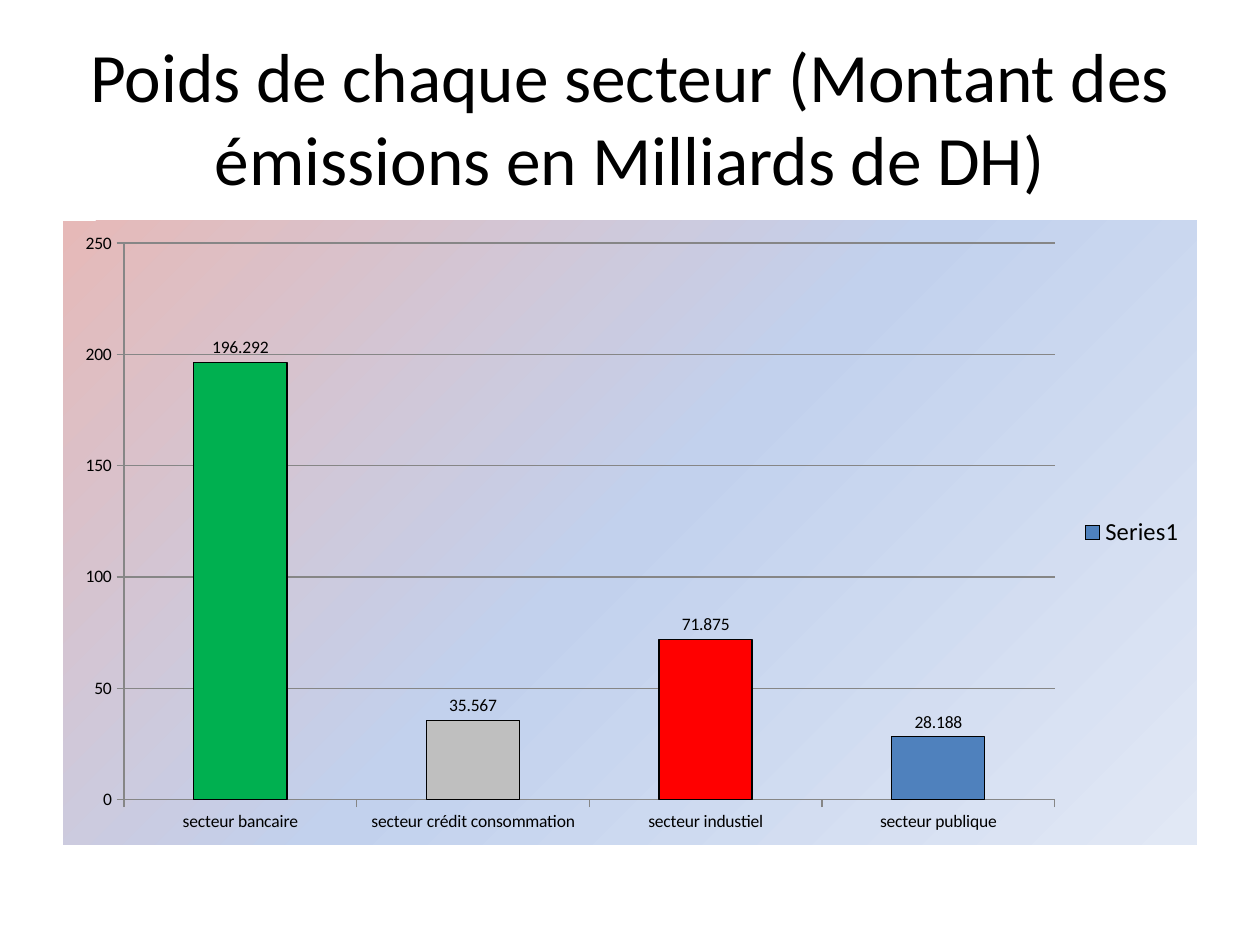
"""Build a slide with a column chart of issue amounts by sector."""
from dataclasses import dataclass

from lxml import etree
from pptx import Presentation
from pptx import util as u
from pptx.chart import data as cd
from pptx.dml.color import RGBColor
from pptx.enum import chart as ce, text as te
from pptx.oxml import ns


@dataclass(frozen=True)
class Theme:
    """Hold the colours, font and type sizes."""
    font: str = "Calibri"
    ink: str = "000000"
    grid: str = "868686"
    bar: str = "4F81BD"
    tints: tuple = ("00B050", "BFBFBF", "FF0000")
    back: tuple = ((0, "E6B9B8"), (50, "C2D1ED"), (100, "E1E8F5"))
    angle: int = 45
    title: float = 39.6
    label: float = 10
    legend: float = 14


THEME = Theme()
SECTORS = {
    "secteur bancaire": 196.292,
    "secteur crédit consommation": 35.567,
    "secteur industiel": 71.875,
    "secteur publique": 28.188,
}


def style(font, size, color=THEME.ink):
    """Set the face, size and colour of a font."""
    font.name, font.size, font.bold = THEME.font, u.Pt(size), False
    font.color.rgb = RGBColor.from_string(color)


def write(shape, words, size, align=te.PP_ALIGN.CENTER, anchor=te.MSO_ANCHOR.MIDDLE):
    """Put formatted text in a shape."""
    frame = shape.text_frame
    frame.text = words
    frame.word_wrap = True
    frame.auto_size = te.MSO_AUTO_SIZE.NONE
    frame.vertical_anchor = anchor
    para = frame.paragraphs[0]
    para.alignment = align
    style(para.runs[0].font, size)


def place(shape, left, top, width, height):
    """Move and size a shape, in centimetres."""
    shape.left, shape.top = u.Cm(left), u.Cm(top)
    shape.width, shape.height = u.Cm(width), u.Cm(height)


def stroke(line, color, width=0.75):
    """Give a line its colour and width."""
    line.color.rgb = RGBColor.from_string(color)
    line.width = u.Pt(width)


def paint(fill, color):
    """Give a fill one solid colour."""
    fill.solid()
    fill.fore_color.rgb = RGBColor.from_string(color)


def shade(chart, stops, angle):
    """Fill the chart area with a linear gradient."""
    props = etree.Element(ns.qn("c:spPr"))
    grad = etree.SubElement(props, ns.qn("a:gradFill"))
    group = etree.SubElement(grad, ns.qn("a:gsLst"))
    for pos, color in stops:
        stop = etree.SubElement(group, ns.qn("a:gs"), pos=str(pos * 1000))
        etree.SubElement(stop, ns.qn("a:srgbClr"), val=color)
    etree.SubElement(grad, ns.qn("a:lin"), ang=str(angle * 60000), scaled="0")
    edge = etree.SubElement(props, ns.qn("a:ln"))
    etree.SubElement(edge, ns.qn("a:noFill"))
    chart.element.find(ns.qn("c:chart")).addnext(props)


def scale(chart):
    """Format both axes and the gridlines."""
    for axis in (chart.category_axis, chart.value_axis):
        axis.major_tick_mark = ce.XL_TICK_MARK.OUTSIDE
        axis.minor_tick_mark = ce.XL_TICK_MARK.NONE
        stroke(axis.format.line, THEME.grid)
        style(axis.tick_labels.font, THEME.label)
    axis = chart.value_axis
    axis.minimum_scale, axis.maximum_scale, axis.major_unit = 0, 250, 50
    axis.has_major_gridlines = True
    stroke(axis.major_gridlines.format.line, THEME.grid)


def bars(plot):
    """Colour the columns and label their values."""
    plot.gap_width = 150
    plot.vary_by_categories = False
    row = plot.series[0]
    row.invert_if_negative = False
    paint(row.format.fill, THEME.bar)
    stroke(row.format.line, THEME.ink)
    for i, tint in enumerate(THEME.tints):
        form = row.points[i].format
        paint(form.fill, tint)
        stroke(form.line, THEME.ink)
    tags = row.data_labels
    tags.show_value = True
    tags.position = ce.XL_LABEL_POSITION.OUTSIDE_END
    style(tags.font, THEME.label)


def graph(slide, values, *box):
    """Add the column chart with its legend."""
    data = cd.CategoryChartData()
    data.categories = list(values)
    data.add_series("Series1", values.values())
    kind = ce.XL_CHART_TYPE.COLUMN_CLUSTERED
    chart = slide.shapes.add_chart(kind, *map(u.Cm, box), data).chart
    chart.has_title = False
    style(chart.font, THEME.label)
    shade(chart, THEME.back, THEME.angle)
    scale(chart)
    bars(chart.plots[0])
    chart.has_legend = True
    chart.legend.position = ce.XL_LEGEND_POSITION.RIGHT
    chart.legend.include_in_layout = False
    style(chart.legend.font, THEME.legend)


def main():
    """Build and save the slide."""
    deck = Presentation()
    deck.slide_width, deck.slide_height = u.Cm(25.4), u.Cm(19.05)
    slide = deck.slides.add_slide(deck.slide_layouts[5])
    head = slide.shapes.title
    place(head, 1.27, 0.76, 22.86, 3.18)
    write(head, "Poids de chaque secteur (Montant des émissions en Milliards de DH)", THEME.title)
    graph(slide, SECTORS, 1.27, 4.45, 22.86, 12.57)
    deck.save("out.pptx")


if __name__ == "__main__":
    main()
